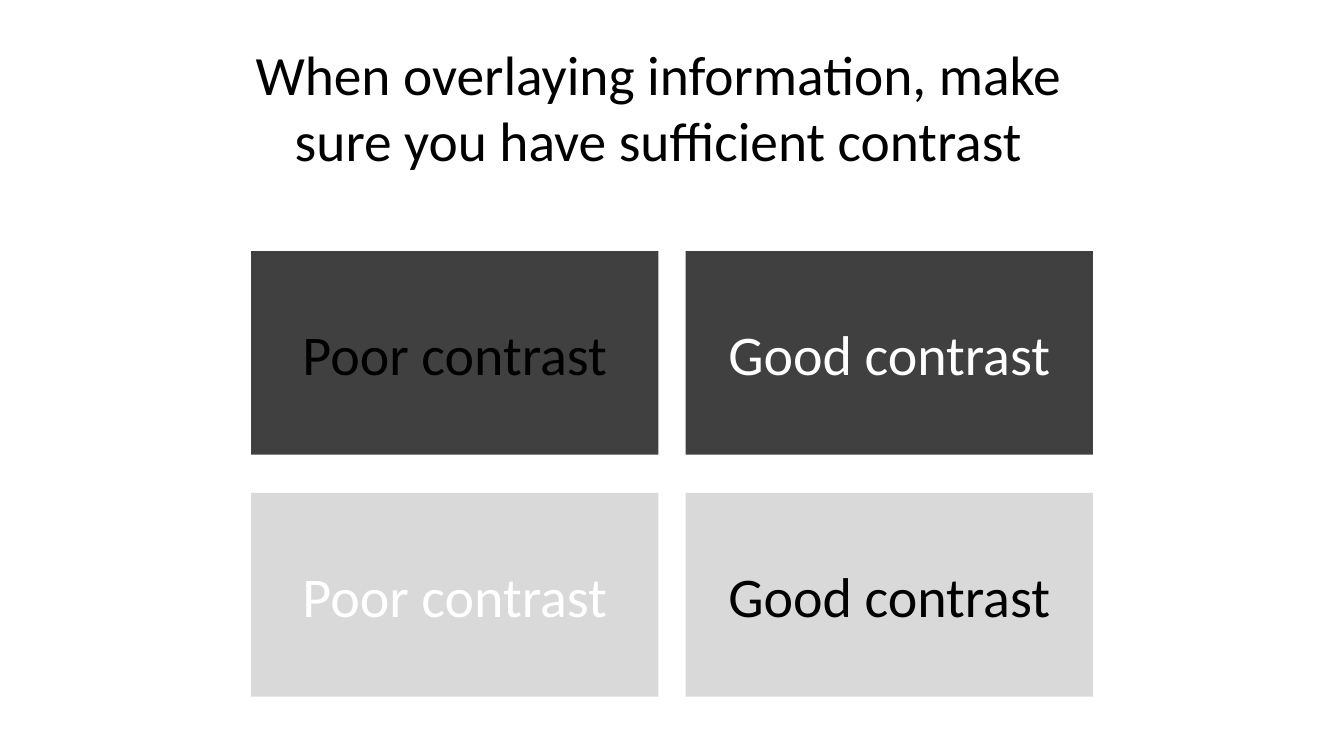
"""Build a slide comparing poor and good text contrast on dark and light boxes."""
from pptx import Presentation
from pptx.dml.color import RGBColor
from pptx.enum.shapes import MSO_SHAPE
from pptx.enum.text import MSO_ANCHOR, MSO_AUTO_SIZE, PP_ALIGN
from pptx.util import Inches, Pt

COLORS = {"black": "000000", "white": "FFFFFF", "dark": "404040", "light": "D9D9D9"}


def write(sp, text, size=40, color="black", font="Calibri"):
    tf = sp.text_frame
    tf.word_wrap = True
    tf.auto_size = MSO_AUTO_SIZE.NONE
    tf.vertical_anchor = MSO_ANCHOR.MIDDLE
    p = tf.paragraphs[0]
    p.alignment = PP_ALIGN.CENTER
    r = p.add_run()
    r.text = text
    r.font.name = font
    r.font.size = Pt(size)
    r.font.color.rgb = RGBColor.from_string(COLORS[color])


prs = Presentation()
prs.slide_width, prs.slide_height = Inches(13.33), Inches(7.5)
s = prs.slides.add_slide(prs.slide_layouts[5])

title = s.shapes.title
title.left, title.top = Inches(2.03), Inches(0.43)
title.width, title.height = Inches(9), Inches(1.25)
write(title, "When overlaying information, make sure you have sufficient contrast", size=39.6)

left, top, width, height = 2.49, 2.49, 4.04, 2.02
col_step, row_step = 4.31, 2.4
labels = ["Poor contrast", "Good contrast"]
rows = [("dark", ["black", "white"]), ("light", ["white", "black"])]

for row, (fill, text_colors) in enumerate(rows):
    for col, (label, color) in enumerate(zip(labels, text_colors)):
        sp = s.shapes.add_shape(
            MSO_SHAPE.RECTANGLE,
            Inches(left + col * col_step), Inches(top + row * row_step),
            Inches(width), Inches(height),
        )
        sp.shadow.inherit = False
        sp.fill.solid()
        sp.fill.fore_color.rgb = RGBColor.from_string(COLORS[fill])
        sp.line.fill.background()
        write(sp, label, color=color)

prs.save("out.pptx")
